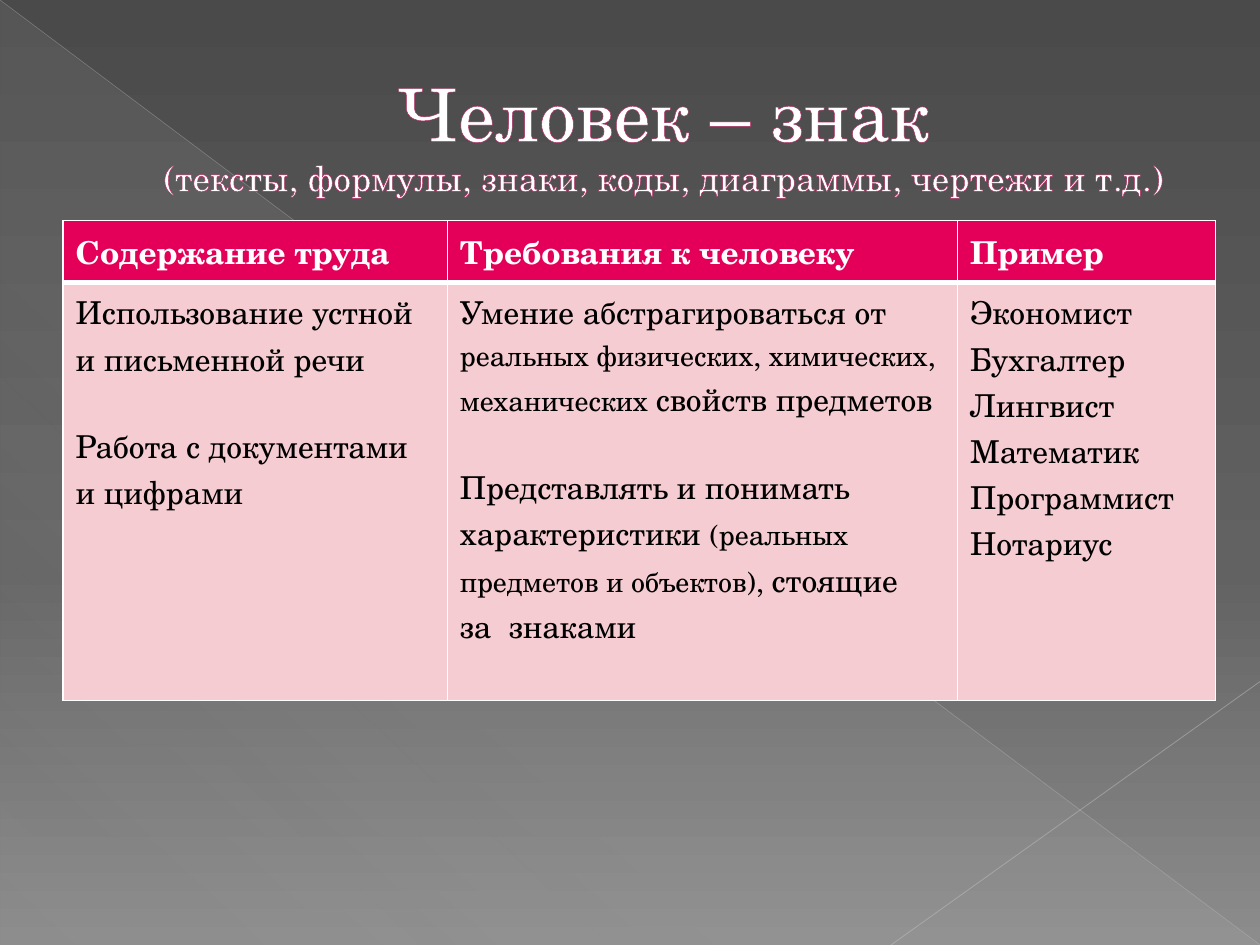
from dataclasses import dataclass

from lxml.etree import SubElement
from pptx import Presentation
from pptx.dml.color import RGBColor
from pptx.enum.shapes import MSO_CONNECTOR as CONN, MSO_SHAPE as SHAPE
from pptx.enum.text import MSO_ANCHOR as ANCHOR, PP_ALIGN as ALIGN
from pptx.oxml.ns import qn
from pptx.util import Cm, Pt


@dataclass(frozen=True)
class Theme:
    font: str = "TeX Gyre Schola"
    white: str = "FFFFFF"
    text: str = "000000"
    header: str = "E40059"
    body: str = "F5CCD1"
    outline: str = "B12761"
    title_size: float = 42
    subtitle_size: float = 20
    table_size: float = 18
    small_size: float = 16
    block_gap: float = 23.6
    # gradient stops: position %, colour, opacity %
    backdrop: tuple = ((0, "4A4A4A", 100), (60, "626262", 100), (100, "8C8C8C", 100))
    wedge: tuple = ((0, "D2D2D2", 10), (70, "D2D2D2", 8), (100, "D2D2D2", 1))


THEME = Theme()
HEADERS = ["Содержание труда", "Требования к человеку", "Пример"]
# Each cell is a list of paragraphs, each paragraph a list of (text, size) runs
BIG, SMALL = THEME.table_size, THEME.small_size
DUTIES = [
    [("Использование устной и письменной речи", BIG)],
    [("Работа с документами и цифрами", BIG)],
]
DEMANDS = [
    [("Умение абстрагироваться от", BIG),
     (" реальных физических, химических, механических ", SMALL),
     ("свойств предметов", BIG)],
    [("Представлять и понимать характеристики ", BIG),
     ("(реальных предметов и объектов), ", SMALL),
     ("стоящие  за  знаками", BIG)],
]
JOBS = [[(job, BIG)] for job in
        ("Экономист", "Бухгалтер", "Лингвист", "Математик", "Программист", "Нотариус")]


def rgb(colour):
    return RGBColor.from_string(colour)


def add_solid(parent, colour, opacity=100):
    clr = SubElement(SubElement(parent, qn("a:solidFill")), qn("a:srgbClr"), val=colour)
    if opacity < 100:
        SubElement(clr, qn("a:alpha"), val=str(opacity * 1000))


def set_gradient(fill, element, stops, angle):
    """Give the fill held in element its stops and clockwise angle."""
    fill.gradient()
    grad = element.find(".//" + qn("a:gradFill"))
    gs_list = grad.find(qn("a:gsLst"))
    for gs in list(gs_list):
        gs_list.remove(gs)
    for pos, colour, opacity in stops:
        gs = SubElement(gs_list, qn("a:gs"), pos=str(pos * 1000))
        clr = SubElement(gs, qn("a:srgbClr"), val=colour)
        if opacity < 100:
            SubElement(clr, qn("a:alpha"), val=str(opacity * 1000))
    grad.find(qn("a:lin")).set("ang", str(angle * 60000))


def format_run(r, size, colour, bold=False):
    r.font.name, r.font.size, r.font.bold = THEME.font, Pt(size), bold
    r.font.color.rgb = rgb(colour)


def add_hairline(s, start, end, colour, width, opacity):
    line = s.shapes.add_connector(CONN.STRAIGHT, *start, *end)
    line.line.width = Pt(width)
    ln = line.line._get_or_add_ln()
    add_solid(ln, colour, opacity)
    SubElement(line._element.spPr, qn("a:effectLst"))


def add_backdrop(s, left, top, width, height):
    set_gradient(s.background.fill, s._element, THEME.backdrop, 90)
    wedge = s.shapes.add_shape(SHAPE.RIGHT_TRIANGLE, left, top, width, height)
    wedge.shadow.inherit = False
    wedge.line.fill.background()
    set_gradient(wedge.fill, wedge._element, THEME.wedge, 133)
    right, bottom = left + width, top + height
    add_hairline(s, (left, top), (right, bottom), "BFBFBF", 0.39, 35)
    add_hairline(s, (right, top + Cm(13.74)), (right - Cm(7.44), bottom), "C6C6C6", 0.47, 45)


def add_title(s, left, top, width, height):
    title = s.shapes.title
    title.left, title.top, title.width, title.height = left, top, width, height
    s.shapes._spTree.append(title._element)  # in front of the backdrop
    tf = title.text_frame
    tf.word_wrap, tf.vertical_anchor = True, ANCHOR.MIDDLE
    tf.text = "Человек – знак\v(тексты, формулы, знаки, коды, диаграммы, чертежи и т.д.)"
    p = tf.paragraphs[0]
    p.alignment = ALIGN.CENTER
    p._p.get_or_add_pPr().set("marL", str(Cm(1.35)))
    for r, size in zip(p.runs, (THEME.title_size, THEME.subtitle_size)):
        format_run(r, size, THEME.white)
        ln = SubElement(r.font._element, qn("a:ln"), w=str(Pt(0.5)))
        add_solid(ln, THEME.outline)
        r.font._element.insert(0, ln)


def set_borders(cell, bottom):
    tc_pr = cell._tc.get_or_add_tcPr()
    for i, (side, width) in enumerate((("L", 1), ("R", 1), ("T", 1), ("B", bottom))):
        ln = SubElement(tc_pr, qn(f"a:ln{side}"), w=str(Pt(width)))
        add_solid(ln, THEME.white)
        tc_pr.insert(i, ln)


def fill_cell(cell, paragraphs, fill, colour, bold=False, gap=0, bottom=1):
    cell.fill.solid()
    cell.fill.fore_color.rgb = rgb(fill)
    set_borders(cell, bottom)
    tf = cell.text_frame
    for i, runs in enumerate(paragraphs):
        p = tf.add_paragraph() if i else tf.paragraphs[0]
        p.space_before = Pt(gap if i else 0)
        for text, size in runs:
            r = p.add_run()
            r.text = text
            format_run(r, size, colour, bold)


def add_profile_table(s, left, top, width, height):
    table = s.shapes.add_table(2, len(HEADERS), left, top, width, height).table
    for column, share in zip(table.columns, (3.05, 4.05, 2.05)):
        column.width = int(width * share / 9.15)
    table.rows[0].height = Cm(1.25)
    table.rows[1].height = height - Cm(1.25)
    columns = zip(HEADERS, (DUTIES, DEMANDS, JOBS), (THEME.block_gap, THEME.block_gap, 0))
    for i, (header, body, gap) in enumerate(columns):
        fill_cell(table.cell(0, i), [[(header, BIG)]], THEME.header, THEME.white,
                  bold=True, bottom=3)
        fill_cell(table.cell(1, i), body, THEME.body, THEME.text, gap=gap)


def main():
    prs = Presentation()
    prs.slide_width, prs.slide_height = Cm(25.4), Cm(19.05)
    s = prs.slides.add_slide(prs.slide_layouts[5])
    add_backdrop(s, 0, 0, prs.slide_width, prs.slide_height)
    add_title(s, Cm(1.27), Cm(0.74), Cm(22.86), Cm(3.89))
    add_profile_table(s, Cm(1.27), Cm(4.45), Cm(23.24), Cm(9.67))
    prs.save("out.pptx")


if __name__ == "__main__":
    main()
